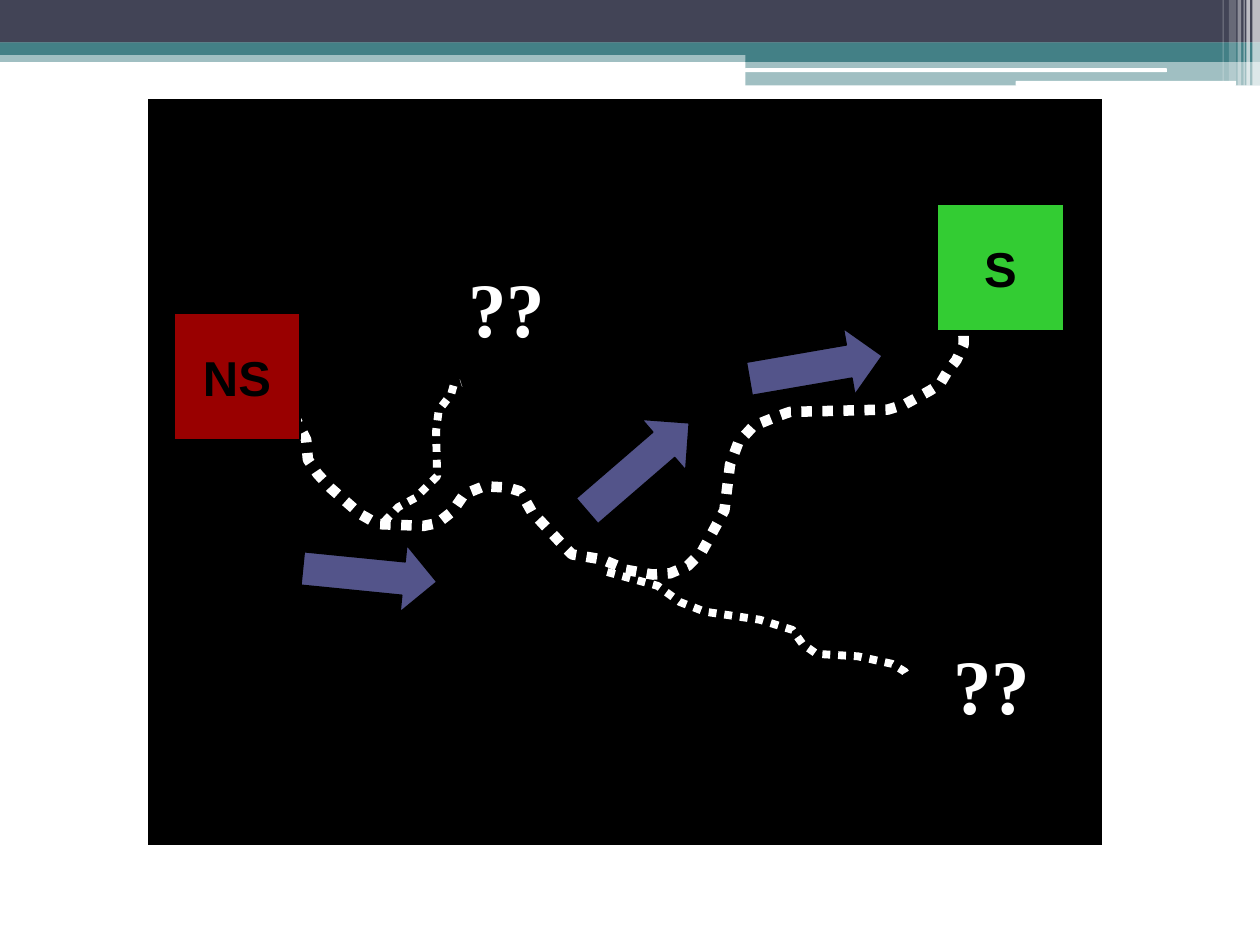
import pptx
import pptx.util
import pptx.dml.color
import pptx.enum.dml
import pptx.enum.shapes
import pptx.enum.text
import pptx.oxml
import pptx.oxml.ns

Pt = pptx.util.Pt
MSO = pptx.enum.shapes.MSO_SHAPE

COLORS = {
    "navy": "424456", "teal": "438086", "white": "FFFFFF", "black": "000000",
    "arrow": "53548A", "red": "990000", "green": "33CC33",
}

MAIN_PATH = [
    (162, 226), (163.4, 229.7), (165.6, 233.3), (169.9, 241.2), (175, 251.3),
    (176, 262.6), (181.4, 270.7), (188.6, 278.6), (205.9, 293.8), (216, 299.5),
    (242.1, 300.5), (250.1, 298.9), (258.5, 292.3), (265.3, 282.4),
    (276.5, 277.9), (290.2, 278.6), (297.4, 280.8), (303.8, 292.3),
    (323.3, 313.2), (326.9, 316.8), (344.2, 319.7), (352.8, 323.3),
    (356.4, 325.4), (373, 328.3), (383, 327.6), (393.1, 323.3), (401, 315.4),
    (404.6, 308.9), (414, 291.6), (417.2, 265.6), (422, 252.8),
    (430.6, 243.4), (445, 237.6), (451.4, 235.4), (507.6, 234), (517, 231.1),
    (531.4, 223.2), (537.1, 219.6), (541.4, 212.4), (546.5, 205.9),
    (550.7, 196.9), (550.1, 162),
]
UPPER_BRANCH = [
    (219.6, 298.1), (227.5, 289.9), (237.6, 284.4), (249.8, 272.2),
    (249.2, 246.3), (250.7, 234.4), (257.8, 225.4), (259.2, 220.3),
    (263.5, 218.9),
]
LOWER_BRANCH = [
    (347, 326.9), (375.8, 334.8), (388.4, 344), (402.8, 349.6),
    (434.2, 354.2), (452.9, 360), (458.6, 368), (466.6, 373.7),
    (490.3, 375.1), (509.8, 379.4), (517, 383.8), (519.1, 387.4),
]


class Deck:
    def __init__(self, prs):
        self.s = prs.slides.add_slide(prs.slide_layouts[6])

    def color(self, name):
        return pptx.dml.color.RGBColor.from_string(COLORS[name])

    def shape(self, kind, box, fill, line=None, width=0.75, alpha=None):
        sp = self.s.shapes.add_shape(kind, *[Pt(v) for v in box])
        sp.shadow.inherit = False
        sp.fill.solid()
        sp.fill.fore_color.rgb = self.color(fill)
        if alpha:
            clr = sp.element.spPr.find(".//" + pptx.oxml.ns.qn("a:srgbClr"))
            node = pptx.oxml.parse_xml(
                f'<a:alpha {pptx.oxml.ns.nsdecls("a")} val="{alpha * 1000}"/>')
            clr.append(node)
        if line:
            sp.line.color.rgb = self.color(line)
            sp.line.width = Pt(width)
        else:
            sp.line.fill.background()
        return sp

    def arrow(self, left, top, angle):
        sp = self.shape(MSO.RIGHT_ARROW, (left, top, 77, 38.2), "arrow", "black")
        sp.rotation = angle

    def trail(self, points, width):
        pts = [(Pt(x), Pt(y)) for x, y in points]
        fb = self.s.shapes.build_freeform(*pts[0], scale=1.0)
        fb.add_line_segments(pts[1:], close=False)
        sp = fb.convert_to_shape()
        sp.shadow.inherit = False
        sp.fill.background()
        sp.line.color.rgb = self.color("white")
        sp.line.width = Pt(width)
        sp.line.dash_style = pptx.enum.dml.MSO_LINE.ROUND_DOT

    def label(self, sp, text, font, size, color):
        p = sp.text_frame.paragraphs[0]
        p.alignment = pptx.enum.text.PP_ALIGN.CENTER
        r = p.add_run()
        r.text = text
        r.font.name = font
        r.font.size = Pt(size)
        r.font.bold = True
        r.font.color.rgb = self.color(color)

    def state(self, text, left, top, fill):
        sp = self.shape(MSO.RECTANGLE, (left, top, 72, 72), fill, "black")
        sp.text_frame.word_wrap = False
        sp.text_frame.vertical_anchor = pptx.enum.text.MSO_ANCHOR.MIDDLE
        self.label(sp, text, "Arial", 28, "black")

    def question(self, left, top):
        sp = self.s.shapes.add_textbox(Pt(left), Pt(top), Pt(85), Pt(60))
        sp.text_frame.word_wrap = True
        self.label(sp, "??", "Times New Roman", 44, "white")


def main():
    prs = pptx.Presentation()
    prs.slide_width, prs.slide_height = Pt(720), Pt(540)
    deck = Deck(prs)

    for box, fill, alpha in [
        ((0, 28.8, 720, 6.6), "teal", 50),
        ((0, 0, 720, 24.4), "navy", None),
        ((0, 24.2, 720, 7.2), "teal", None),
        ((426, 28.4, 294, 7), "teal", None),
        ((426, 34.8, 294, 14), "teal", 50),
    ]:
        deck.shape(MSO.RECTANGLE, box, fill, alpha=alpha)
    for box in [(425.6, 39, 241.2, 2.2), (580.4, 46.2, 126, 2.8)]:
        deck.shape(MSO.ROUNDED_RECTANGLE, box, "white")
    for left, width, height, alpha in [
        (715.6, 4.4, 49, 65), (712.2, 2, 49, 65), (710.6, 0.7, 49, 60),
        (707.2, 2, 49, 40), (702.2, 4.2, 46.2, 20), (698.6, 0.7, 46.2, 30),
    ]:
        deck.shape(MSO.RECTANGLE, (left, 0, width, height), "white", alpha=alpha)

    deck.shape(MSO.RECTANGLE, (82.2, 54.4, 550, 430.6), "black", "white", 4.5)
    deck.trail(MAIN_PATH, 6)
    deck.arrow(427.7, 190.8, 350.2)
    deck.trail(UPPER_BRANCH, 4.5)
    deck.trail(LOWER_BRANCH, 4.5)
    deck.question(524.2, 360.7)
    deck.question(247, 145.4)
    deck.arrow(326.2, 247.7, 319.2)
    deck.arrow(172.8, 309.6, 5.7)
    deck.state("NS", 99.4, 179.3, "red")
    deck.state("S", 535.7, 116.9, "green")

    prs.save("out.pptx")


if __name__ == "__main__":
    main()
